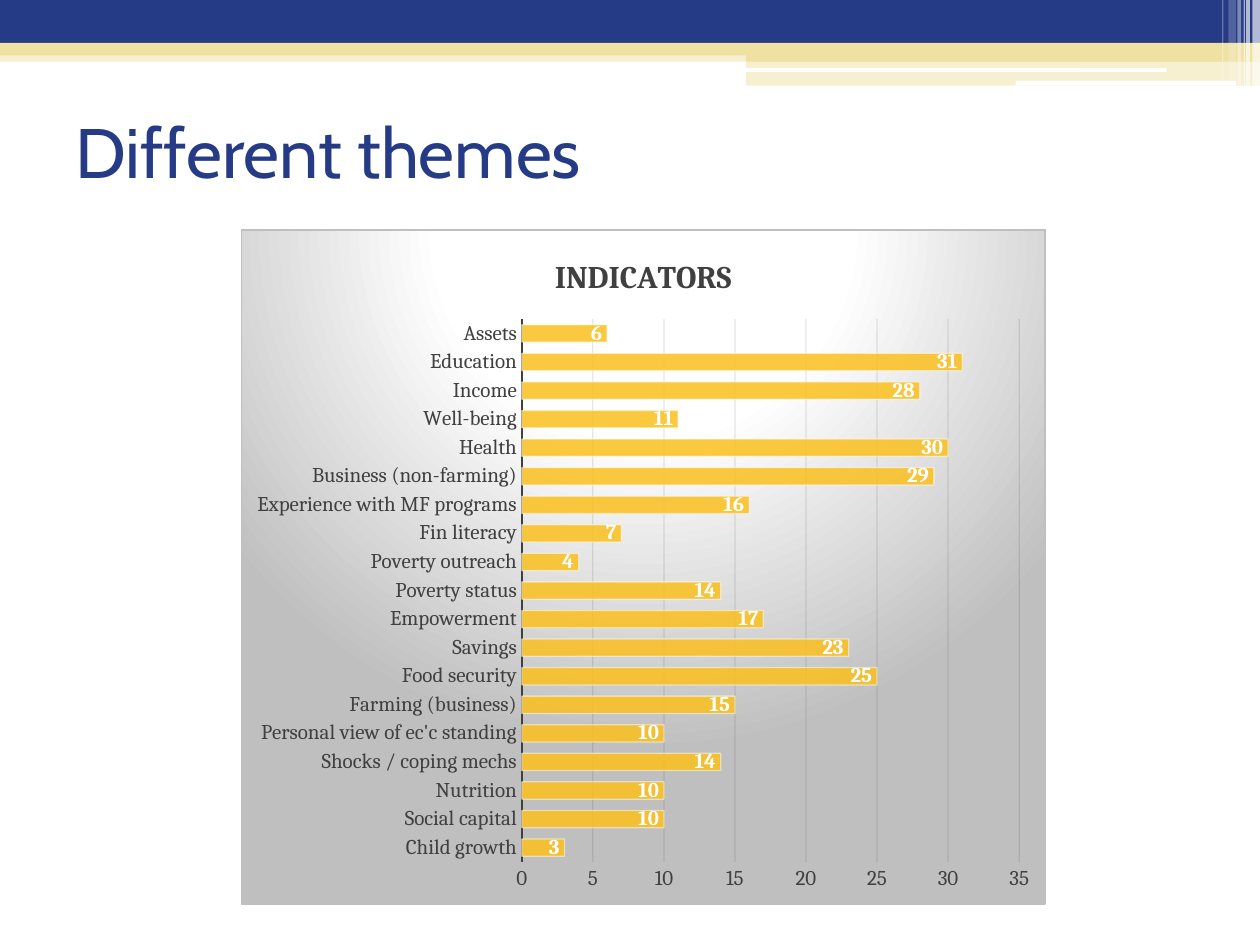
import dataclasses

import lxml.etree
import pptx
import pptx.chart.data
import pptx.dml.color
import pptx.enum.chart
import pptx.enum.shapes
import pptx.enum.text
import pptx.oxml
import pptx.oxml.ns
import pptx.util

Inches = pptx.util.Inches
Pt = pptx.util.Pt
SHAPE = pptx.enum.shapes.MSO_SHAPE


@dataclasses.dataclass(frozen=True)
class Theme:
    navy: str = "263B86"
    sand: str = "EFE1A2"
    gold: str = "FBC01E"
    white: str = "FFFFFF"
    silver: str = "BFBFBF"
    ink: str = "404040"
    grid: str = "0D0D0D"
    title_font: str = "Cabin"
    chart_font: str = "Cambria"
    title_size: int = 40
    chart_title_size: int = 18
    label_size: int = 12


# Bars listed from the bottom of the chart upwards
INDICATORS = {
    "Child growth": 3,
    "Social capital": 10,
    "Nutrition": 10,
    "Shocks / coping mechs": 14,
    "Personal view of ec'c standing": 10,
    "Farming (business)": 15,
    "Food security": 25,
    "Savings": 23,
    "Empowerment": 17,
    "Poverty status": 14,
    "Poverty outreach": 4,
    "Fin literacy": 7,
    "Experience with MF programs": 16,
    "Business (non-farming)": 29,
    "Health": 30,
    "Well-being": 11,
    "Income": 28,
    "Education": 31,
    "Assets": 6,
}


def set_opacity(color, percent):
    """Give an a:srgbClr element an opacity."""
    alpha = lxml.etree.SubElement(color, pptx.oxml.ns.qn("a:alpha"))
    alpha.set("val", str(percent * 1000))


class SlideBuilder:
    def __init__(self, slide, theme):
        self.slide = slide
        self.theme = theme

    def rgb(self, color):
        return pptx.dml.color.RGBColor.from_string(color)

    def style_font(self, font, name, size, color, bold=False):
        font.name = name
        font.size = Pt(size)
        font.bold = bold
        font.color.rgb = self.rgb(color)

    def style_line(self, line, color, width):
        line.color.rgb = self.rgb(color)
        line.width = Pt(width)

    def bar(self, left, top, width, height, color, opacity=100, kind=SHAPE.RECTANGLE):
        box = self.slide.shapes.add_shape(
            kind, Inches(left), Inches(top), Inches(width), Inches(height))
        box.shadow.inherit = False
        box.fill.solid()
        box.fill.fore_color.rgb = self.rgb(color)
        box.line.fill.background()
        if opacity < 100:
            set_opacity(box.element.xpath("./p:spPr/a:solidFill/a:srgbClr")[0], opacity)

    def title(self, text, left, top, width, height):
        box = self.slide.shapes.title
        box.left, box.top = Inches(left), Inches(top)
        box.width, box.height = Inches(width), Inches(height)
        frame = box.text_frame
        frame.text = text
        frame.vertical_anchor = pptx.enum.text.MSO_ANCHOR.MIDDLE
        para = frame.paragraphs[0]
        para.alignment = pptx.enum.text.PP_ALIGN.LEFT
        self.style_font(para.runs[0].font, self.theme.title_font,
                        self.theme.title_size, self.theme.navy)

    def bar_chart(self, heading, values, left, top, width, height):
        theme = self.theme
        data = pptx.chart.data.CategoryChartData()
        data.categories = list(values)
        data.add_series("Series 1", list(values.values()))
        chart = self.slide.shapes.add_chart(
            pptx.enum.chart.XL_CHART_TYPE.BAR_CLUSTERED, Inches(left), Inches(top),
            Inches(width), Inches(height), data).chart
        self.style_font(chart.font, theme.chart_font, 10, "000000")
        chart.has_legend = False
        chart.has_title = True
        chart.chart_title.include_in_layout = False
        frame = chart.chart_title.text_frame
        frame.text = heading
        self.style_font(frame.paragraphs[0].runs[0].font, theme.chart_font,
                        theme.chart_title_size, theme.ink, bold=True)

        # Axes and gridlines
        for axis in (chart.category_axis, chart.value_axis):
            axis.major_tick_mark = pptx.enum.chart.XL_TICK_MARK.NONE
            axis.minor_tick_mark = pptx.enum.chart.XL_TICK_MARK.NONE
            self.style_font(axis.tick_labels.font, theme.chart_font,
                            theme.label_size, theme.ink)
        self.style_line(chart.category_axis.format.line, theme.ink, 1.5)
        axis = chart.value_axis
        axis.minimum_scale, axis.maximum_scale, axis.major_unit = 0, 35, 5
        axis.format.line.fill.background()
        axis.has_major_gridlines = True
        self.style_line(axis.major_gridlines.format.line, theme.grid, 0.75)

        # Bars and their value labels
        plot = chart.plots[0]
        plot.gap_width = 65
        plot.vary_by_categories = False
        series = plot.series[0]
        series.format.fill.solid()
        series.format.fill.fore_color.rgb = self.rgb(theme.gold)
        self.style_line(series.format.line, theme.white, 0.75)
        labels = series.data_labels
        labels.show_value = True
        labels.position = pptx.enum.chart.XL_LABEL_POSITION.INSIDE_END
        self.style_font(labels.font, theme.chart_font, theme.label_size,
                        theme.white, bold=True)

        # Transparency of bars, outlines and gridlines
        for owner, opacity in (("c:ser/c:spPr", 85), ("c:ser/c:spPr/a:ln", 50),
                               ("c:majorGridlines/c:spPr/a:ln", 10)):
            color = chart.element.xpath(f".//{owner}/a:solidFill/a:srgbClr")[0]
            set_opacity(color, opacity)
        self.chart_background(chart)

    def chart_background(self, chart):
        theme = self.theme
        stops = "".join(
            f'<a:gs pos="{place * 1000}"><a:srgbClr val="{color}"/></a:gs>'
            for place, color in ((0, theme.white), (39, theme.white), (100, theme.silver)))
        background = pptx.oxml.parse_xml(
            f'<c:spPr {pptx.oxml.ns.nsdecls("c", "a")}>'
            f'<a:gradFill><a:gsLst>{stops}</a:gsLst><a:path path="circle">'
            '<a:fillToRect l="50000" t="-80000" r="50000" b="180000"/></a:path></a:gradFill>'
            f'<a:ln w="{Pt(0.75)}"><a:solidFill><a:srgbClr val="{theme.silver}"/>'
            '</a:solidFill></a:ln></c:spPr>')
        chart.element.xpath("./c:chart")[0].addnext(background)


def main():
    deck = pptx.Presentation()
    deck.slide_width, deck.slide_height = Inches(10), Inches(7.5)
    theme = Theme()
    page = SlideBuilder(deck.slides.add_slide(deck.slide_layouts[5]), theme)

    # Header bands
    page.bar(0, 0.4, 10, 0.09, theme.sand, 50)
    page.bar(0, 0, 10, 0.34, theme.navy)
    page.bar(0, 0.34, 10, 0.1, theme.sand)
    page.bar(5.92, 0.39, 4.08, 0.1, theme.sand)
    page.bar(5.92, 0.48, 4.08, 0.2, theme.sand, 50)
    page.bar(5.91, 0.54, 3.35, 0.03, theme.white, kind=SHAPE.ROUNDED_RECTANGLE)
    page.bar(8.06, 0.64, 1.75, 0.04, theme.white, kind=SHAPE.ROUNDED_RECTANGLE)

    # Pale stripes at the right edge
    for left, width, height, opacity in (
            (9.94, 0.06, 0.68, 65), (9.89, 0.03, 0.68, 65), (9.87, 0.01, 0.68, 60),
            (9.82, 0.03, 0.68, 40), (9.75, 0.06, 0.64, 20), (9.7, 0.01, 0.64, 30)):
        page.bar(left, 0, width, height, theme.white, opacity)

    # Title and chart
    page.title("Different themes", 0.5, 0.73, 9, 0.93)
    page.bar_chart("INDICATORS", INDICATORS, 1.91, 1.82, 6.39, 5.36)
    deck.save("out.pptx")


if __name__ == "__main__":
    main()
